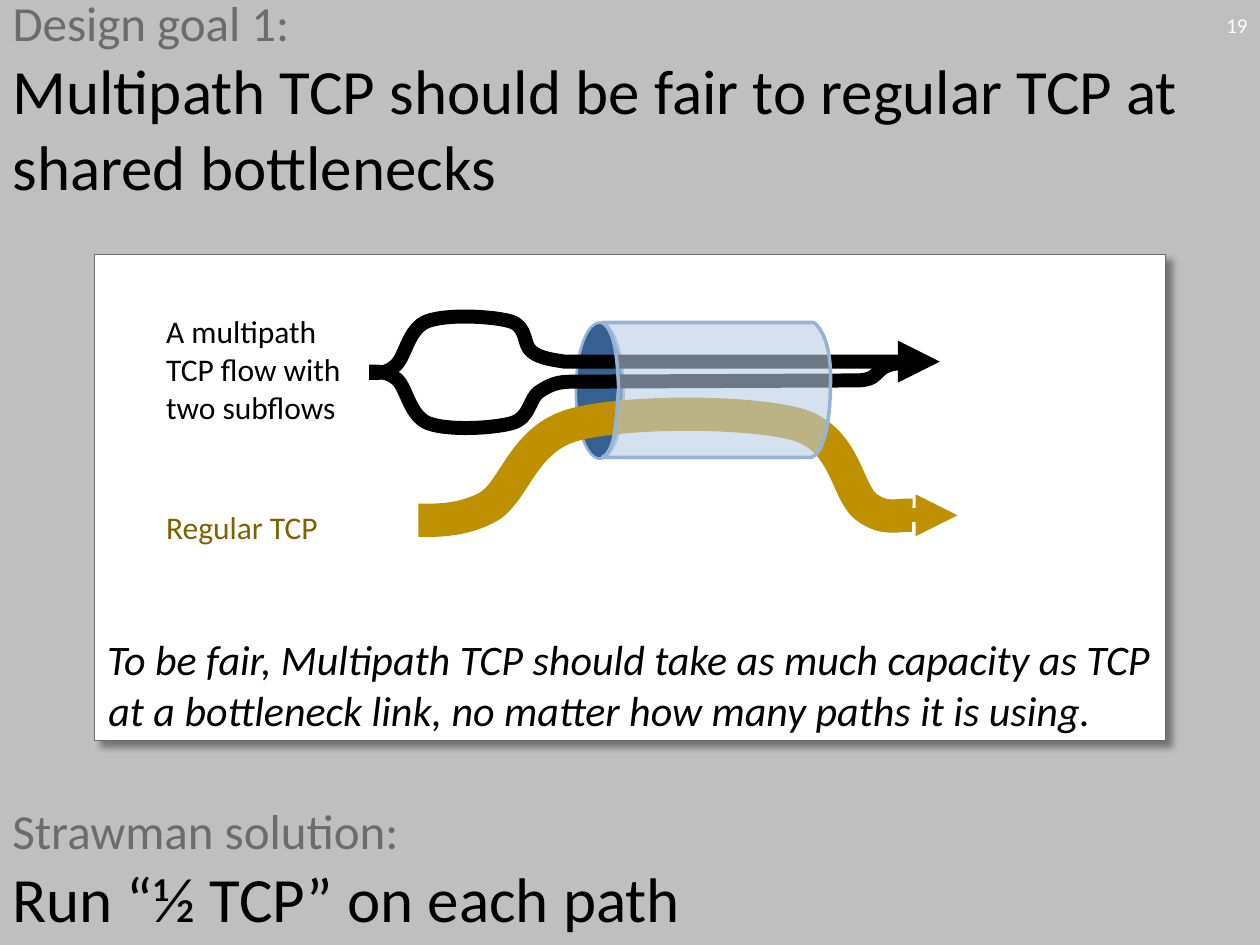
import itertools

import pptx
import pptx.dml.color
import pptx.enum.shapes
import pptx.enum.text
import pptx.oxml.ns
import pptx.util
import lxml.etree

Inches = pptx.util.Inches
RGBColor = pptx.dml.color.RGBColor
Align = pptx.enum.text.PP_ALIGN
Anchor = pptx.enum.text.MSO_ANCHOR
AutoSize = pptx.enum.text.MSO_AUTO_SIZE
qn = pptx.oxml.ns.qn

BACKGROUND = RGBColor(0xBF, 0xBF, 0xBF)
WHITE = RGBColor(0xFF, 0xFF, 0xFF)
BLACK = RGBColor(0, 0, 0)
GRAY = RGBColor(0x6C, 0x6C, 0x6C)
GOLD = RGBColor(0xBF, 0x90, 0x00)
DARK_GOLD = RGBColor(0x80, 0x60, 0x00)
PIPE_END = RGBColor(0x37, 0x60, 0x92)
PIPE_SIDE = RGBColor(0xB9, 0xCD, 0xE5)
PIPE_EDGE = RGBColor(0x95, 0xB3, 0xD7)

FONT = "Calibri"

GOAL = [("Design goal 1:", 28, GRAY),
        ("Multipath TCP should be fair to regular TCP at shared bottlenecks", 36, BLACK)]
FAIRNESS = [("To be fair, Multipath TCP should take as much capacity as TCP "
             "at a bottleneck link, no matter how many paths it is using.", 24, BLACK)]
STRAWMAN = [("Strawman solution:", 28, GRAY), ("Run “½ TCP” on each path", 36, BLACK)]
LABELS = [
    ((0, 6.27, 10, 1.23), STRAWMAN, {"anchor": Anchor.MIDDLE}),
    ((1.22, 2.43, 1.65, 1.01), [("A multipath TCP flow with two subflows", 18, BLACK)],
     {"auto_size": AutoSize.SHAPE_TO_FIT_TEXT}),
    ((1.22, 3.98, 1.65, 0.4), [("Regular TCP", 18, DARK_GOLD)],
     {"auto_size": AutoSize.SHAPE_TO_FIT_TEXT}),
    ((9.17, 0, 0.83, 0.4), [("19", 12, WHITE)],
     {"anchor": Anchor.MIDDLE, "align": Align.RIGHT}),
]

LOWER_SUBFLOW = [(2.93, 2.95), (2.97, 2.95, 3.07, 2.94, 3.15, 3.01),
                 (3.23, 3.08, 3.25, 3.3, 3.4, 3.36), (3.56, 3.42, 3.91, 3.4, 4.06, 3.36),
                 (4.21, 3.32, 4.2, 3.16, 4.28, 3.11), (4.37, 3.05, 4.43, 3.03, 4.54, 3.03),
                 (6.79, 3.02), (7.06, 3.02, 6.86, 2.86, 7.3, 2.88)]
UPPER_SUBFLOW = [(2.93, 2.96), (2.98, 2.96, 3.07, 2.97, 3.14, 2.9),
                 (3.22, 2.83, 3.24, 2.61, 3.39, 2.55), (3.55, 2.49, 3.91, 2.51, 4.05, 2.55),
                 (4.19, 2.59, 4.15, 2.74, 4.22, 2.79), (4.29, 2.85, 4.43, 2.86, 4.48, 2.87),
                 (7.46, 2.87)]
REGULAR_FLOW = [(3.32, 4.13), (3.43, 4.13, 3.67, 4.14, 3.88, 4.02),
                (4.09, 3.89, 4.15, 3.48, 4.56, 3.37), (4.97, 3.26, 5.94, 3.26, 6.33, 3.37),
                (6.71, 3.48, 6.72, 3.9, 6.87, 4.02), (7.03, 4.14, 7.12, 4.08, 7.24, 4.09)]
PIPE = [(4.78, 3.63), (6.44, 3.63), (6.56, 3.59, 6.59, 3.26, 6.59, 3.08),
        (6.6, 2.9, 6.58, 2.66, 6.46, 2.56), (4.78, 2.56),
        (4.89, 2.63, 4.9, 2.88, 4.91, 3.08), (4.89, 3.28, 4.9, 3.57, 4.78, 3.63)]
FLOWS = [(LOWER_SUBFLOW, BLACK, 8, False), (UPPER_SUBFLOW, BLACK, 8, True),
         (REGULAR_FLOW, GOLD, 19, False)]


def write_text(shape, lines, anchor=Anchor.TOP, align=Align.LEFT, italic=False,
               auto_size=AutoSize.NONE):
    frame = shape.text_frame
    frame.word_wrap = True
    frame.auto_size = auto_size
    frame.vertical_anchor = anchor
    paragraph = frame.paragraphs[0]
    paragraph.alignment = align
    for index, (text, size, color) in enumerate(lines):
        if index:
            paragraph.add_line_break()
        run = paragraph.add_run()
        run.text = text
        run.font.name = FONT
        run.font.size = pptx.util.Pt(size)
        run.font.italic = italic
        run.font.color.rgb = color
    return paragraph


def place(shape, box):
    shape.left, shape.top, shape.width, shape.height = map(Inches, box)


def set_line(shape, color, width, arrow=False):
    shape.line.color.rgb = color
    shape.line.width = pptx.util.Pt(width)
    if arrow:
        line = shape._element.spPr.find(qn("a:ln"))
        lxml.etree.SubElement(line, qn("a:tailEnd"), type="triangle")


def set_fill(shape, color, opacity=None):
    shape.fill.solid()
    shape.fill.fore_color.rgb = color
    if opacity:
        rgb = shape._element.spPr.find(qn("a:solidFill")).find(qn("a:srgbClr"))
        lxml.etree.SubElement(rgb, qn("a:alpha"), val=str(opacity * 1000))


def add_panel_shadow(shape):
    shape.shadow.inherit = False
    effects = shape._element.spPr.find(qn("a:effectLst"))
    shadow = lxml.etree.SubElement(
        effects, qn("a:outerShdw"), blurRad=str(pptx.util.Pt(4)),
        dist=str(pptx.util.Pt(5)), dir=str(45 * 60000), algn="tl", rotWithShape="0")
    rgb = lxml.etree.SubElement(shadow, qn("a:srgbClr"), val=str(BLACK))
    lxml.etree.SubElement(rgb, qn("a:alpha"), val="40000")


def add_curve(shapes, segments, close=False):
    points = [(Inches(x), Inches(y)) for segment in segments
              for x, y in zip(segment[::2], segment[1::2])]
    builder = shapes.build_freeform(*points[0])
    builder.add_line_segments(points[1:], close=close)
    shape = builder.convert_to_shape()
    shape.shadow.inherit = False

    outline = next(shape._element.iter(qn("a:path")))
    steps = iter(list(outline)[1:])
    for segment in segments[1:]:
        group = list(itertools.islice(steps, len(segment) // 2))
        if len(group) == 3:
            curve = lxml.etree.Element(qn("a:cubicBezTo"))
            group[0].addprevious(curve)
            for step in group:
                curve.append(step[0])
                outline.remove(step)
    return shape


def add_diagram(shapes):
    pipe_end = shapes.add_shape(pptx.enum.shapes.MSO_SHAPE.OVAL,
                                *map(Inches, (4.22, 2.91, 1.08, 0.38)))
    pipe_end.rotation = 270
    pipe_end.shadow.inherit = False
    set_fill(pipe_end, PIPE_END)
    set_line(pipe_end, PIPE_EDGE, 1.5)

    for segments, color, width, arrow in FLOWS:
        flow = add_curve(shapes, segments)
        flow.fill.background()
        set_line(flow, color, width, arrow)

    pipe = add_curve(shapes, PIPE, close=True)
    set_fill(pipe, PIPE_SIDE, opacity=59)
    set_line(pipe, PIPE_EDGE, 2)

    arrow = shapes.add_connector(pptx.enum.shapes.MSO_CONNECTOR.STRAIGHT,
                                 *map(Inches, (7.24, 4.09, 7.6, 4.09)))
    set_line(arrow, GOLD, 8, arrow=True)
    lxml.etree.SubElement(arrow._element.spPr, qn("a:effectLst"))


def main():
    presentation = pptx.Presentation()
    presentation.slide_width, presentation.slide_height = Inches(10), Inches(7.5)
    slide = presentation.slides.add_slide(presentation.slide_layouts[1])
    slide.background.fill.solid()
    slide.background.fill.fore_color.rgb = BACKGROUND

    title, panel = slide.placeholders
    place(title, (0, 0, 10, 1.55))
    write_text(title, GOAL, anchor=Anchor.MIDDLE)

    place(panel, (0.75, 2.02, 8.5, 3.86))
    set_fill(panel, WHITE)
    set_line(panel, GRAY, 0.75)
    add_panel_shadow(panel)
    paragraph = write_text(panel, FAIRNESS, anchor=Anchor.BOTTOM, italic=True)
    properties = paragraph._p.get_or_add_pPr()
    properties.set("marL", str(Inches(0.01)))
    properties.set("indent", str(Inches(-0.01)))
    lxml.etree.SubElement(properties, qn("a:buNone"))

    add_diagram(slide.shapes.add_group_shape().shapes)
    for box, lines, text_format in LABELS:
        write_text(slide.shapes.add_textbox(*map(Inches, box)), lines, **text_format)
    presentation.save("out.pptx")


if __name__ == "__main__":
    main()
